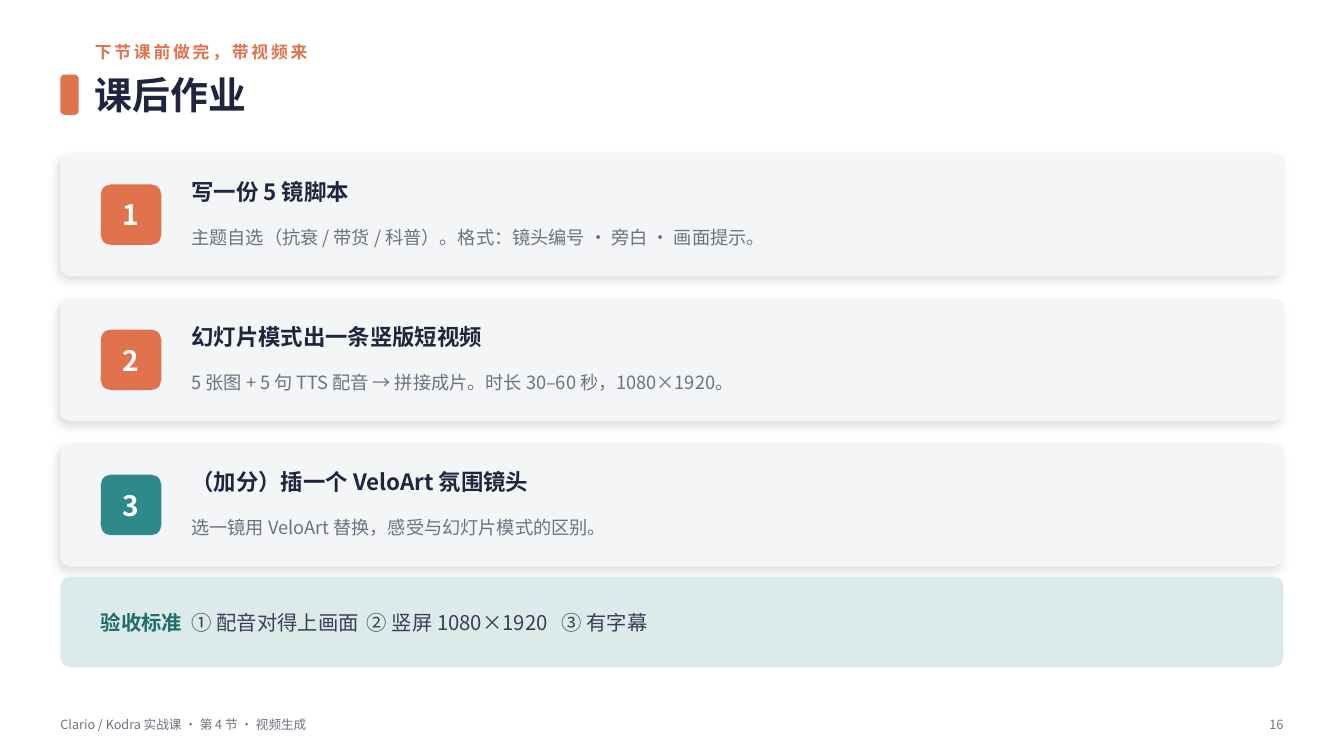
import dataclasses
import typing

import lxml.etree
import pptx
import pptx.dml.color
import pptx.enum.lang
import pptx.enum.shapes
import pptx.enum.text
import pptx.oxml.ns
import pptx.util

Inches = pptx.util.Inches
Align = pptx.enum.text.PP_ALIGN
FONT = "Noto Sans CJK SC"
COLORS = {
    "orange": "E0734D", "teal": "2E8A8A", "dark_teal": "236B6B",
    "pale_teal": "DCEAEA", "navy": "20243F", "slate": "3A3E57",
    "gray": "6B7280", "card": "F4F5F7", "white": "FFFFFF", "black": "000000",
}
MARGIN, CONTENT_WIDTH = 0.6, 12.13
RIGHT = MARGIN + CONTENT_WIDTH
HEADING_LEFT = 0.94
CARD_TOP, CARD_HEIGHT, CARD_STEP = 1.52, 1.22, 1.44
BADGE_SIZE = 0.6
CARD_TEXT_LEFT = 1.9
CARD_TEXT_WIDTH = RIGHT - 0.4 - CARD_TEXT_LEFT


@dataclasses.dataclass
class Task:
    title: str
    detail: str
    color: str


TASKS = [
    Task("写一份 5 镜脚本",
         "主题自选（抗衰 / 带货 / 科普）。格式：镜头编号 · 旁白 · 画面提示。", "orange"),
    Task("幻灯片模式出一条竖版短视频",
         "5 张图 + 5 句 TTS 配音 → 拼接成片。时长 30–60 秒，1080×1920。", "orange"),
    Task("（加分）插一个 VeloArt 氛围镜头",
         "选一镜用 VeloArt 替换，感受与幻灯片模式的区别。", "teal"),
]


def rgb(name: str) -> pptx.dml.color.RGBColor:
    return pptx.dml.color.RGBColor.from_string(COLORS[name])


def add_element(parent: typing.Any, tag: str, **attributes: typing.Any) -> typing.Any:
    element = lxml.etree.SubElement(parent, pptx.oxml.ns.qn(tag))
    for name, value in attributes.items():
        element.set(name, str(value))
    return element


def write(box: typing.Any, text: str, *, size: float, color: str, bold: bool = False,
          align: typing.Any = Align.LEFT, spacing: float = 0) -> typing.Any:
    """Append a formatted span to the first paragraph of a box."""
    frame = box.text_frame
    frame.margin_left = frame.margin_right = frame.margin_top = frame.margin_bottom = 0
    frame.word_wrap = True
    frame.auto_size = pptx.enum.text.MSO_AUTO_SIZE.NONE
    frame.vertical_anchor = pptx.enum.text.MSO_ANCHOR.MIDDLE
    para = frame.paragraphs[0]
    para.alignment = align
    span = para.add_run()
    span.text = text
    span.font.size = pptx.util.Pt(size)
    span.font.bold = bold
    span.font.color.rgb = rgb(color)
    span.font.name = FONT
    span.font.language_id = pptx.enum.lang.MSO_LANGUAGE_ID.SIMPLIFIED_CHINESE
    properties = span.font._element
    add_element(properties, "a:ea", typeface=FONT)
    if spacing:
        properties.set("spc", str(round(spacing * 100)))
    return para


def add_text(page: typing.Any, left: float, top: float, width: float, height: float,
             text: str, **style: typing.Any) -> typing.Any:
    box = page.shapes.add_textbox(Inches(left), Inches(top), Inches(width), Inches(height))
    write(box, text, **style)
    return box


def add_panel(page: typing.Any, left: float, top: float, width: float, height: float,
              color: str, radius: float = 0.1) -> typing.Any:
    panel = page.shapes.add_shape(
        pptx.enum.shapes.MSO_SHAPE.ROUNDED_RECTANGLE,
        Inches(left), Inches(top), Inches(width), Inches(height))
    panel.adjustments[0] = radius / min(width, height)
    panel.fill.solid()
    panel.fill.fore_color.rgb = rgb(color)
    panel.line.fill.background()
    panel.shadow.inherit = False
    return panel


def add_shadow(panel: typing.Any) -> None:
    effects = panel._element.spPr.find(pptx.oxml.ns.qn("a:effectLst"))
    shadow = add_element(effects, "a:outerShdw", blurRad=pptx.util.Pt(7),
                         dist=pptx.util.Pt(3), dir=135 * 60000,
                         algn="bl", rotWithShape=0)
    tint = add_element(shadow, "a:srgbClr", val=COLORS["black"])
    add_element(tint, "a:alpha", val=12000)


def add_heading(page: typing.Any) -> None:
    width = RIGHT - HEADING_LEFT
    add_text(page, HEADING_LEFT, 0.36, width, 0.3, "下节课前做完，带视频来",
             size=12, color="orange", bold=True, spacing=2)
    add_panel(page, MARGIN, 0.74, 0.18, 0.4, "orange", radius=0.04)
    title = page.shapes.title
    title.left, title.top = Inches(HEADING_LEFT), Inches(0.64)
    title.width, title.height = Inches(width), Inches(0.6)
    write(title, "课后作业", size=27, color="navy", bold=True)


def add_task(page: typing.Any, number: int, task: Task) -> None:
    top = CARD_TOP + (number - 1) * CARD_STEP
    add_shadow(add_panel(page, MARGIN, top, CONTENT_WIDTH, CARD_HEIGHT, "card"))
    badge = add_panel(page, 1, top + (CARD_HEIGHT - BADGE_SIZE) / 2,
                      BADGE_SIZE, BADGE_SIZE, task.color)
    write(badge, str(number), size=20, color="white", bold=True, align=Align.CENTER)
    add_text(page, CARD_TEXT_LEFT, top + 0.17, CARD_TEXT_WIDTH, 0.42, task.title,
             size=16, color="navy", bold=True)
    add_text(page, CARD_TEXT_LEFT, top + 0.62, CARD_TEXT_WIDTH, 0.42, task.detail,
             size=13, color="gray")


def add_criteria(page: typing.Any) -> None:
    add_panel(page, MARGIN, 5.72, CONTENT_WIDTH, 0.9, "pale_teal")
    box = add_text(page, 1, 5.72, 11.33, 0.9, "验收标准",
                   size=14.5, color="dark_teal", bold=True)
    para = box.text_frame.paragraphs[0]
    tabs = add_element(para._p.get_or_add_pPr(), "a:tabLst")
    for position in (0.9, 2.64, 4.57):
        add_element(tabs, "a:tab", pos=Inches(position), algn="l")
    write(box, "\t① 配音对得上画面\t② 竖屏 1080×1920\t③ 有字幕", size=14.5, color="slate")


def main() -> None:
    deck = pptx.Presentation()
    deck.slide_width, deck.slide_height = Inches(13.33), Inches(7.5)
    page = deck.slides.add_slide(deck.slide_layouts.get_by_name("Title Only"))

    # Heading, task cards and acceptance criteria
    add_heading(page)
    for number, task in enumerate(TASKS, start=1):
        add_task(page, number, task)
    add_criteria(page)

    # Footer
    add_text(page, MARGIN, 7.04, 9, 0.3, "Clario / Kodra 实战课 · 第 4 节 · 视频生成",
             size=9, color="gray")
    add_text(page, RIGHT - 0.7, 7.04, 0.7, 0.3, "16",
             size=9, color="gray", align=Align.RIGHT)
    deck.save("out.pptx")


if __name__ == "__main__":
    main()
